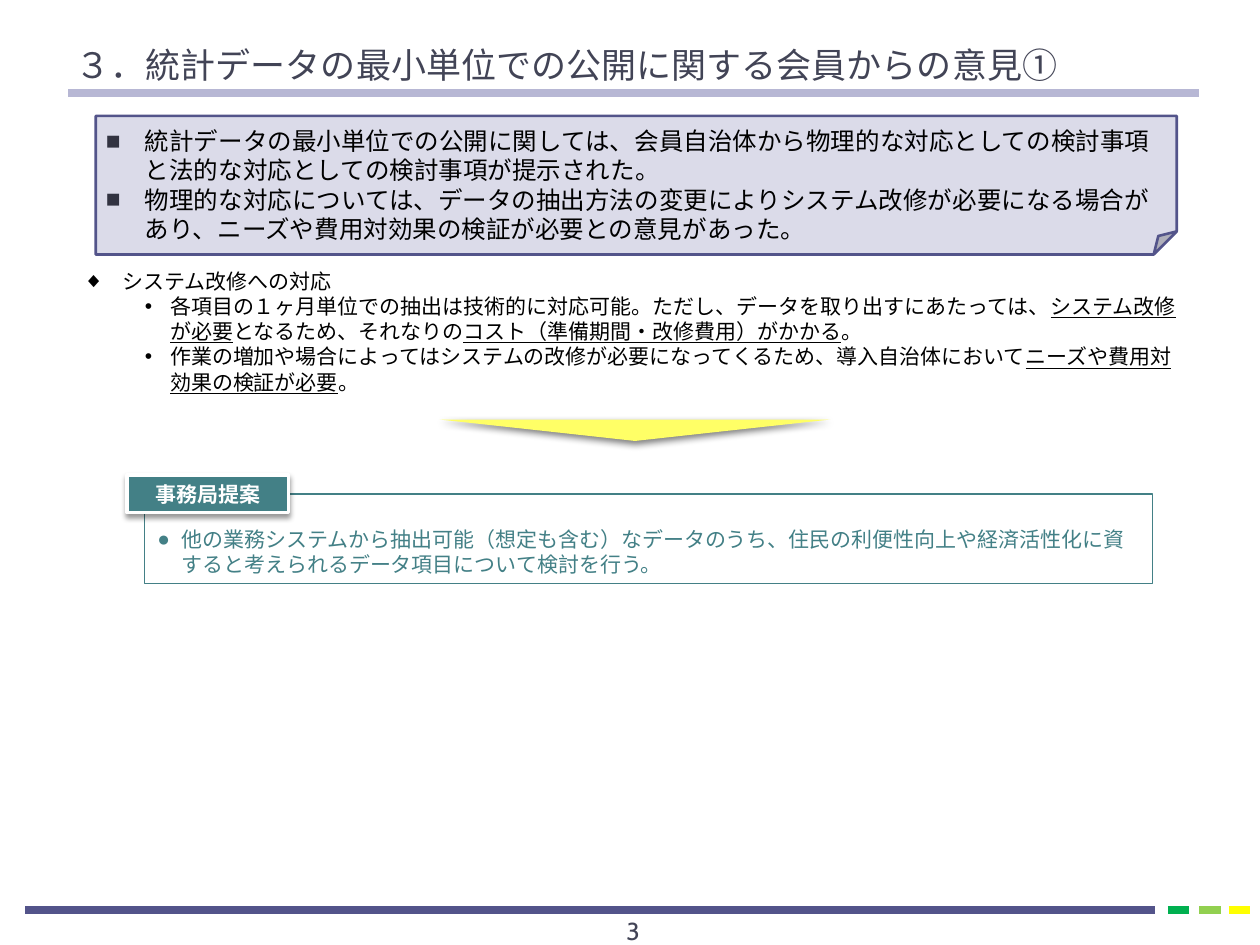
import pptx
import pptx.util
import pptx.dml.color
import pptx.enum.shapes
import pptx.enum.text
import pptx.oxml
import pptx.oxml.ns
from lxml import etree

Inches, Pt = pptx.util.Inches, pptx.util.Pt
SHAPE = pptx.enum.shapes.MSO_SHAPE
ALIGN = pptx.enum.text.PP_ALIGN
ANCHOR = pptx.enum.text.MSO_ANCHOR
qn = pptx.oxml.ns.qn
EAST_ASIAN_FONT = "Noto Sans CJK JP"


def color(hex_text):
    return pptx.dml.color.RGBColor.from_string(hex_text)


def write(shape, paragraphs, size, font, ink, bold=False, align=ALIGN.LEFT,
          anchor=ANCHOR.TOP, inset=(0.1, 0.05)):
    """Fill a shape with (text, bullet, left, hanging, bullet colour) rows; _marks_ underline."""
    frame = shape.text_frame
    side, edge = map(Inches, inset)
    frame_format = {"word_wrap": True, "auto_size": pptx.enum.text.MSO_AUTO_SIZE.NONE,
                    "vertical_anchor": anchor, "margin_left": side, "margin_right": side,
                    "margin_top": edge, "margin_bottom": edge}
    for key, value in frame_format.items():
        setattr(frame, key, value)
    for index, (text, bullet, left, hanging, bullet_ink) in enumerate(paragraphs):
        paragraph = frame.add_paragraph() if index else frame.paragraphs[0]
        if bullet:
            properties = paragraph._p.get_or_add_pPr()
            properties.set("marL", str(Inches(left)))
            properties.set("indent", str(-Inches(hanging)))
            bullet_color = etree.SubElement(properties, qn("a:buClr"))
            etree.SubElement(bullet_color, qn("a:srgbClr"), val=bullet_ink)
            etree.SubElement(properties, qn("a:buFont"), typeface="Arial")
            etree.SubElement(properties, qn("a:buChar"), char=bullet)
        paragraph_format = {"alignment": align, "line_spacing": Pt(size * 1.2),
                            "space_before": Pt(0), "space_after": Pt(0)}
        for key, value in paragraph_format.items():
            setattr(paragraph, key, value)
        for part, words in enumerate(text.split("_")):
            run = paragraph.add_run()
            run.text = words
            run_format = {"size": Pt(size), "name": font, "bold": bold, "underline": part % 2 == 1}
            for key, value in run_format.items():
                setattr(run.font, key, value)
            run.font.color.rgb = color(ink)
            etree.SubElement(run._r.get_or_add_rPr(), qn("a:ea"), typeface=EAST_ASIAN_FONT)


presentation = pptx.Presentation()
presentation.slide_width, presentation.slide_height = Inches(10), Inches(7.5)
slide = presentation.slides.add_slide(presentation.slide_layouts[1])

# Rules under the title and above the page number: left, right, y, colour, width
rules = [
    (0.2, 9.17, 7.22, "53548A", 4.5),
    (9.27, 9.44, 7.22, "00B050", 4.5),
    (9.52, 9.69, 7.22, "92D050", 4.5),
    (9.75, 9.92, 7.22, "FFFF00", 4.5),
    (0.54, 9.52, 0.74, "B7B7D4", 4.25),
]
for left, right, y, ink, width in rules:
    rule = slide.shapes.add_connector(pptx.enum.shapes.MSO_CONNECTOR.STRAIGHT,
                                      Inches(left), Inches(y), Inches(right), Inches(y))
    rule.line.color.rgb = color(ink)
    rule.line.width = Pt(width)
    etree.SubElement(rule._element.spPr, qn("a:effectLst"))

# Title and list of opinions
title, opinions = slide.shapes.title, slide.placeholders[1]
for placeholder, box in ((title, (0.5, 0.01, 9, 0.72)), (opinions, (0.56, 2.08, 8.94, 1.11))):
    for key, value in zip(("left", "top", "width", "height"), box):
        setattr(placeholder, key, Inches(value))
write(title, [("３．統計データの最小単位での公開に関する会員からの意見①", None, 0, 0, None)],
      20, "Arial", "424456", anchor=ANCHOR.BOTTOM)
write(opinions, [
    ("システム改修への対応", "◆", 0.31, 0.31, "000000"),
    ("各項目の１ヶ月単位での抽出は技術的に対応可能。ただし、データを取り出すにあたっては、"
     "_システム改修が必要_となるため、それなりの_コスト（準備期間・改修費用）がかかる_。",
     "•", 0.69, 0.2, "000000"),
    ("作業の増加や場合によってはシステムの改修が必要になってくるため、導入自治体において"
     "_ニーズや費用対効果の検証が必要_。", "•", 0.69, 0.2, "000000"),
], 12, "Arial", "000000")

# Page number
page_number = slide.shapes.add_textbox(Inches(3.94), Inches(7.22), Inches(2.17), Inches(0.4))
write(page_number, [("3", None, 0, 0, None)], 14, "Cabin", "424456", align=ALIGN.CENTER)

# Panels: preset, box, fill, line colour, line width, shadow (opacity %, blur pt)
panels = [
    (SHAPE.FOLDED_CORNER, (0.76, 0.92, 8.58, 1.1), "DBDBE9", "53548A", 1.5, None),
    (SHAPE.FLOWCHART_MERGE, (3.49, 3.33, 3.1, 0.17), "FFFF66", None, 0, (50, 4)),
    (SHAPE.RECTANGLE, (1.15, 3.92, 8, 0.71), None, "438086", 0.75, None),
    (SHAPE.RECTANGLE, (1.01, 3.77, 1.28, 0.3), "438086", "FFFFFF", 2, (40, 3)),
]
drawn = []
for preset, box, fill, line, width, shadow in panels:
    panel = slide.shapes.add_shape(preset, *map(Inches, box))
    panel.shadow.inherit = False
    if fill:
        panel.fill.solid()
        panel.fill.fore_color.rgb = color(fill)
    else:
        panel.fill.background()
    if line:
        panel.line.color.rgb = color(line)
        panel.line.width = Pt(width)
    else:
        panel.line.fill.background()
    if shadow:
        opacity, blur = shadow
        effects = panel._element.spPr.find(qn("a:effectLst"))
        outer = etree.SubElement(effects, qn("a:outerShdw"), blurRad=str(Pt(blur)),
                                 dist=str(Pt(2)), dir="5400000", rotWithShape="0")
        black = etree.SubElement(outer, qn("a:srgbClr"), val="000000")
        etree.SubElement(black, qn("a:alpha"), val=str(opacity * 1000))
    drawn.append(panel)
summary, down_arrow, proposal, proposal_label = drawn

# Panel texts
write(summary, [
    ("統計データの最小単位での公開に関しては、会員自治体から物理的な対応としての検討事項"
     "と法的な対応としての検討事項が提示された。", "■", 0.31, 0.31, "323341"),
    ("物理的な対応については、データの抽出方法の変更によりシステム改修が必要になる場合が"
     "あり、ニーズや費用対効果の検証が必要との意見があった。", "■", 0.31, 0.31, "323341"),
], 14, EAST_ASIAN_FONT, "000000", inset=(0.08, 0.08))
write(proposal, [
    ("他の業務システムから抽出可能（想定も含む）なデータのうち、住民の利便性向上や経済活性化に資"
     "すると考えられるデータ項目について検討を行う。", "●", 0.19, 0.19, "438086"),
], 12, "Arial", "438086", anchor=ANCHOR.BOTTOM)
write(proposal_label, [("事務局提案", None, 0, 0, None)], 12, "Cabin", "FFFFFF", bold=True,
      align=ALIGN.CENTER, anchor=ANCHOR.MIDDLE)

presentation.save("out.pptx")
